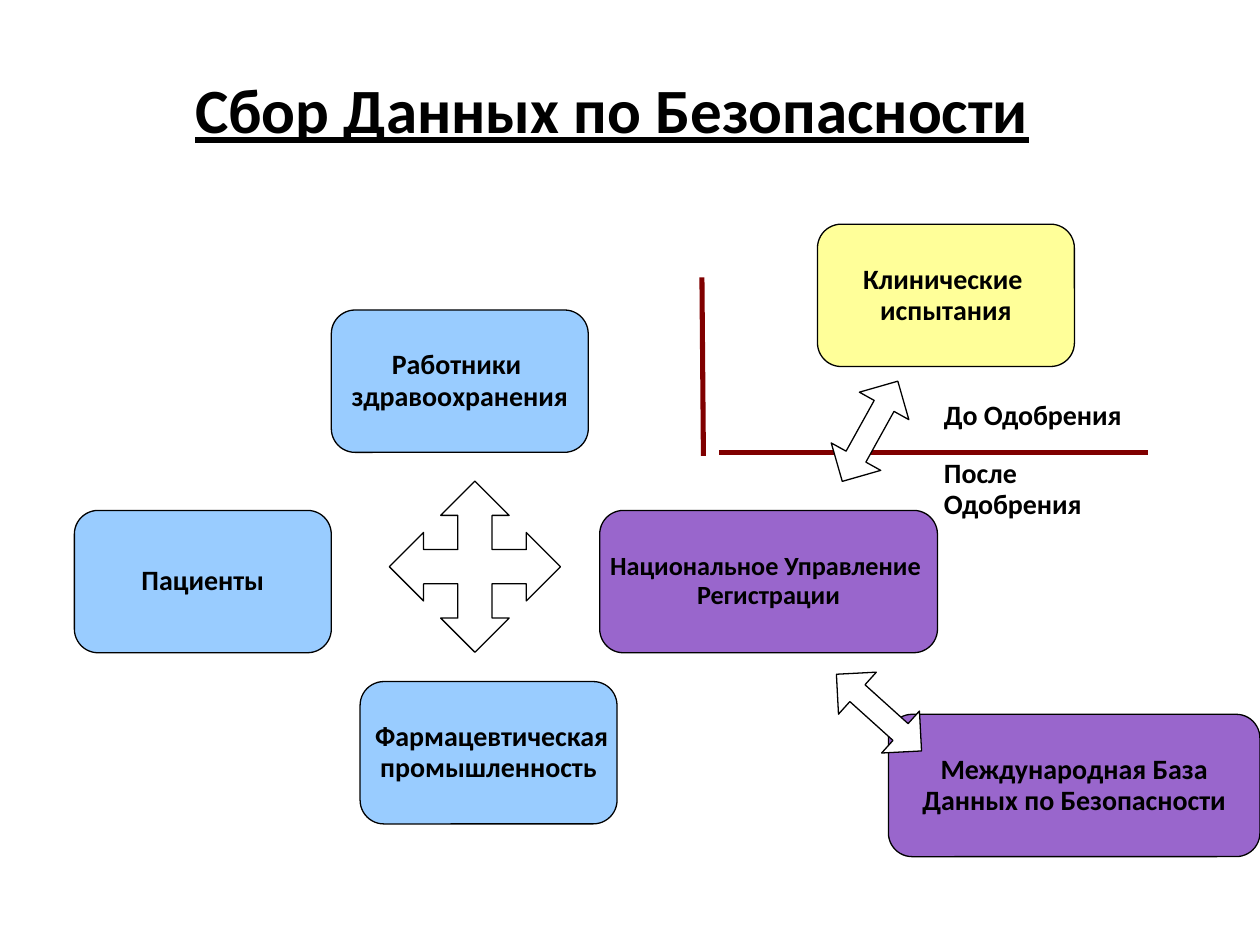
from lxml import etree
from pptx import Presentation
from pptx.dml.color import RGBColor
from pptx.enum.shapes import MSO_CONNECTOR, MSO_SHAPE
from pptx.enum.text import MSO_ANCHOR, PP_ALIGN
from pptx.oxml.ns import qn
from pptx.util import Cm, Pt

ROUND = MSO_SHAPE.ROUNDED_RECTANGLE
CROSS = MSO_SHAPE.QUAD_ARROW
DOUBLE = MSO_SHAPE.UP_DOWN_ARROW
STRAIGHT = MSO_CONNECTOR.STRAIGHT
LEFT, CENTER = PP_ALIGN.LEFT, PP_ALIGN.CENTER
TOP, MIDDLE = MSO_ANCHOR.TOP, MSO_ANCHOR.MIDDLE

BLACK, WHITE, RED = "000000", "FFFFFF", "800000"
BLUE, PURPLE, YELLOW = "99CCFF", "9966CC", "FFFF99"


def color(code):
    return RGBColor.from_string(code)


def assign(target, values):
    for name, value in values.items():
        setattr(target, name, value)


class Board:
    font = {"name": "Calibri", "bold": True}
    inset = {"margin_left": Cm(0.23), "margin_right": Cm(0.23),
             "margin_top": Cm(0.1), "margin_bottom": Cm(0.1)}
    bare = dict.fromkeys(inset, 0)

    def __init__(self, slide):
        self.shapes = slide.shapes

    def letter(self, shape, lines, size, align, frame, space=0.93, under=None):
        """Put styled lines of text into a shape, one paragraph each."""
        body = shape.text_frame
        assign(body, frame)
        for i, line in enumerate(lines):
            para = body.add_paragraph() if i else body.paragraphs[0]
            assign(para, {"alignment": align, "line_spacing": space})
            run = para.add_run()
            run.text = line
            assign(run.font, {**self.font, "size": Pt(size), "underline": under})
            run.font.color.rgb = color(BLACK)

    def title(self, area, text):
        box = self.shapes.add_textbox(*map(Cm, area))
        frame = {**self.bare, "word_wrap": True, "vertical_anchor": MIDDLE}
        self.letter(box, [text], 36, CENTER, frame, space=1.0, under=True)

    def label(self, area, text):
        box = self.shapes.add_textbox(*map(Cm, area))
        frame = {**self.inset, "word_wrap": True, "vertical_anchor": TOP}
        self.letter(box, [text], 16, LEFT, frame)

    def form(self, kind, area, fill, adjust, turn=0):
        """Add an outlined preset shape with its adjustments and rotation."""
        shape = self.shapes.add_shape(kind, *map(Cm, area))
        shape.shadow.inherit = False
        shape.fill.solid()
        shape.fill.fore_color.rgb = color(fill)
        shape.line.color.rgb = color(BLACK)
        shape.line.width = Pt(0.75)
        shape.rotation = turn
        for i, value in enumerate(adjust):
            shape.adjustments[i] = value
        return shape

    def node(self, left, top, fill, lines, width=5.18, size=16):
        shape = self.form(ROUND, (left, top, width, 2.87), fill, [0.167])
        frame = {**self.inset, "word_wrap": False, "vertical_anchor": MIDDLE}
        self.letter(shape, lines, size, CENTER, frame)

    def rule(self, *ends):
        line = self.shapes.add_connector(STRAIGHT, *map(Cm, ends))
        line.line.color.rgb = color(RED)
        line.line.width = Pt(2.89)
        etree.SubElement(line._element.spPr, qn("a:effectLst"))


def main():
    deck = Presentation()
    deck.slide_width, deck.slide_height = Cm(25.4), Cm(19.05)
    board = Board(deck.slides.add_slide(deck.slide_layouts[6]))

    board.title((0.51, 0.71, 23.65, 2.95), "Сбор Данных по Безопасности")

    board.node(7.26, 13.74, BLUE, [" Фармацевтическая", "промышленность"])
    board.node(1.5, 10.29, BLUE, ["Пациенты"])
    board.node(12.09, 10.29, PURPLE,
               ["Национальное Управление ", "Регистрации"], width=6.81, size=15)
    board.node(17.91, 14.4, PURPLE,
               ["Международная База", "Данных по Безопасности"], width=7.49)
    board.node(6.68, 6.25, BLUE, ["Работники ", "здравоохранения"])
    board.node(16.48, 4.52, YELLOW, ["Клинические ", "испытания"])

    board.form(CROSS, (7.85, 9.7, 3.45, 3.45), WHITE, [0.2, 0.2, 0.2])
    board.rule(14.15, 5.59, 14.18, 9.19)
    board.rule(14.5, 9.12, 23.14, 9.12)
    board.label((18.8, 7.98, 4.65, 0.89), "До Одобрения")
    board.label((18.8, 9.14, 4.6, 0.89), "После Одобрения")

    for left, top, turn in ((16.97, 7.54, 29), (17.15, 13.21, 312)):
        board.form(DOUBLE, (left, top, 1.14, 2.31), WHITE, [0.5, 0.4], turn)

    deck.save("out.pptx")


if __name__ == "__main__":
    main()
